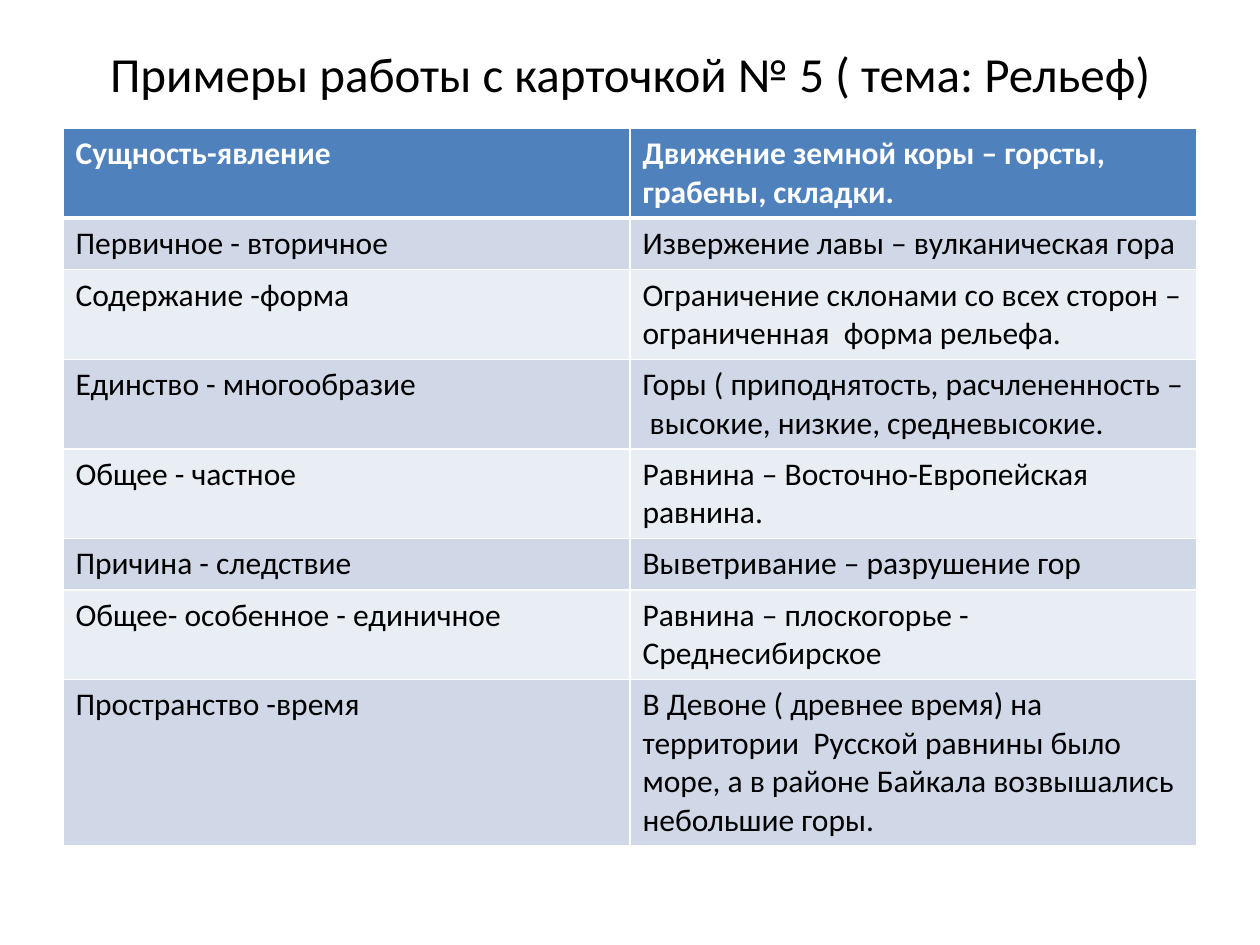
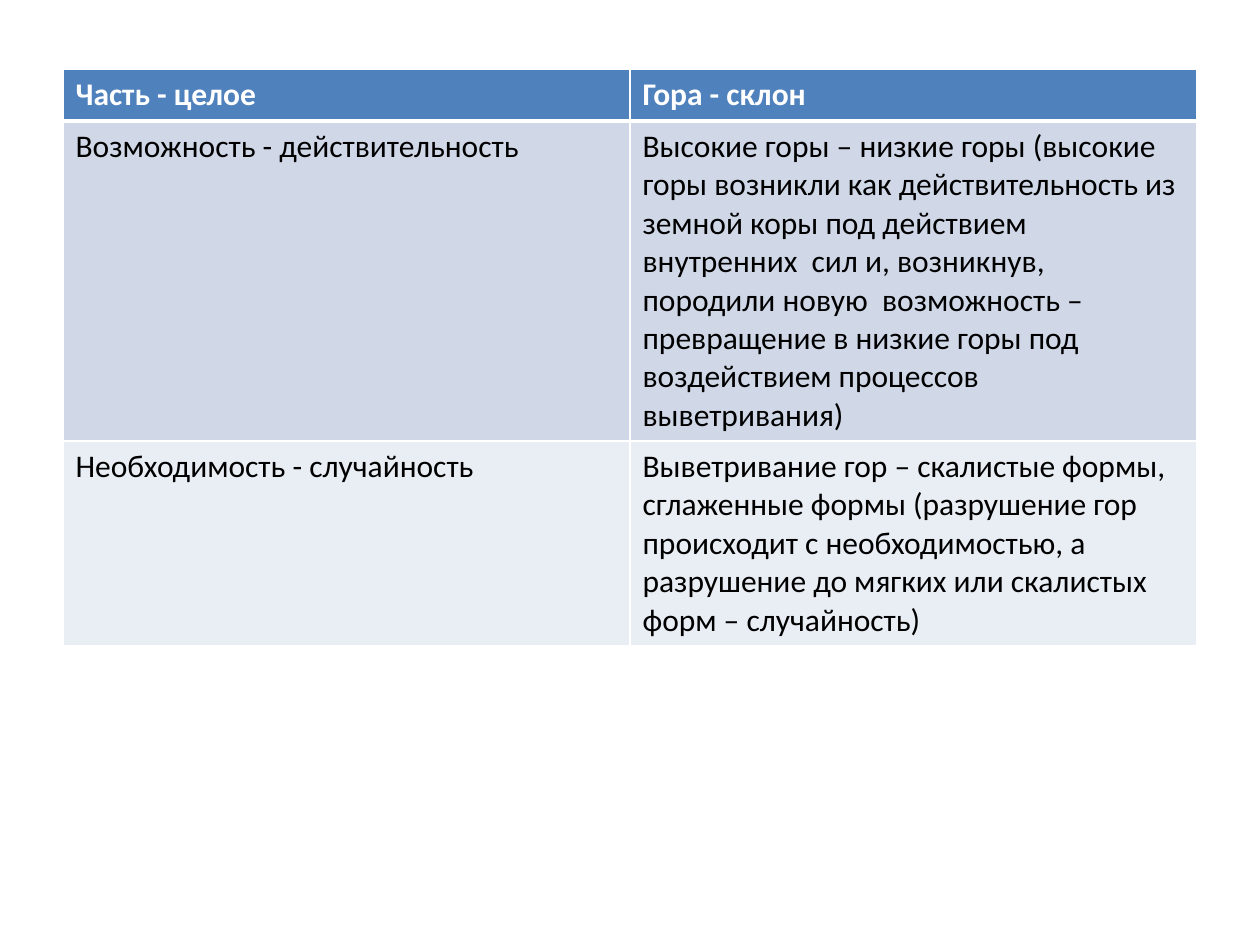
"""Build two slides of paired concepts on the topic of landforms."""
from lxml import etree
from pptx import Presentation
from pptx.dml.color import RGBColor
from pptx.enum.text import MSO_ANCHOR, PP_ALIGN
from pptx.oxml.ns import qn
from pptx.util import Inches, Pt

CENTER, LEFT = PP_ALIGN.CENTER, PP_ALIGN.LEFT
MIDDLE = MSO_ANCHOR.MIDDLE
TITLE_ONLY, BLANK = 5, 6

FONT = "Calibri"
COLORS = {
    "text": "000000",
    "white": "FFFFFF",
    "header": "4F81BD",
    "odd": "D0D8E8",
    "even": "E9EDF4",
}
MARGIN, WIDTH, ROW_H = 0.5, 9, 0.41

SLIDES = [
    {
        "title": "Примеры работы с карточкой № 5 ( тема: Рельеф)",
        "top": 1.02,
        "rows": [
            ("Сущность-явление", "Движение земной коры – горсты, грабены, складки."),
            ("Первичное - вторичное", "Извержение лавы – вулканическая гора"),
            ("Содержание -форма",
             "Ограничение склонами со всех сторон –ограниченная  форма рельефа."),
            ("Единство - многообразие",
             "Горы ( приподнятость, расчлененность –  высокие, низкие, средневысокие."),
            ("Общее - частное", "Равнина – Восточно-Европейская равнина."),
            ("Причина - следствие", "Выветривание – разрушение гор"),
            ("Общее- особенное - единичное", "Равнина – плоскогорье - Среднесибирское"),
            ("Пространство -время",
             "В Девоне ( древнее время) на территории  Русской равнины было море, "
             "а в районе Байкала возвышались небольшие горы."),
        ],
    },
    {
        "title": None,
        "top": 0.55,
        "rows": [
            ("Часть - целое", "Гора - склон"),
            ("Возможность - действительность",
             "Высокие горы – низкие горы (высокие горы возникли как действительность "
             "из земной коры под действием внутренних  сил и, возникнув, породили "
             "новую  возможность – превращение в низкие горы под  воздействием "
             "процессов выветривания)"),
            ("Необходимость - случайность",
             "Выветривание гор – скалистые формы, сглаженные формы (разрушение гор "
             "происходит с необходимостью, а разрушение до мягких или скалистых "
             "форм – случайность)"),
        ],
    },
]


def write(tf, text, size=18, color="text", bold=False, align=LEFT):
    p = tf.paragraphs[0]
    p.alignment = align
    r = p.add_run()
    r.text = text
    r.font.name = FONT
    r.font.size = Pt(size)
    r.font.bold = bold
    r.font.color.rgb = RGBColor.from_string(COLORS[color])


def add_borders(cell, top=1, bottom=1):
    tcPr = cell._tc.get_or_add_tcPr()
    for tag, width in (("lnL", 1), ("lnR", 1), ("lnT", top), ("lnB", bottom)):
        ln = etree.SubElement(tcPr, qn(f"a:{tag}"), w=str(Pt(width)))
        fill = etree.SubElement(ln, qn("a:solidFill"))
        etree.SubElement(fill, qn("a:srgbClr"), val=COLORS["white"])


def add_title(slide, text):
    sp = slide.shapes.title
    sp.left, sp.top = Inches(MARGIN), Inches(0.3)
    sp.width, sp.height = Inches(WIDTH), Inches(0.56)
    tf = sp.text_frame
    tf.vertical_anchor = MIDDLE
    write(tf, text, size=28, align=CENTER)


def add_pairs(slide, rows, top):
    table = slide.shapes.add_table(
        len(rows), 2, Inches(MARGIN), Inches(top),
        Inches(WIDTH), Inches(ROW_H * len(rows))).table
    for i, pair in enumerate(rows):
        header = i == 0
        band = "header" if header else "odd" if i % 2 else "even"
        for j, text in enumerate(pair):
            cell = table.cell(i, j)
            add_borders(cell, top=3 if i == 1 else 1, bottom=3 if header else 1)
            cell.fill.solid()
            cell.fill.fore_color.rgb = RGBColor.from_string(COLORS[band])
            write(cell.text_frame, text, color="white" if header else "text", bold=header)


def main():
    prs = Presentation()
    prs.slide_width, prs.slide_height = Inches(10), Inches(7.5)
    for content in SLIDES:
        layout = TITLE_ONLY if content["title"] else BLANK
        slide = prs.slides.add_slide(prs.slide_layouts[layout])
        if content["title"]:
            add_title(slide, content["title"])
        add_pairs(slide, content["rows"], content["top"])
    prs.save("out.pptx")


if __name__ == "__main__":
    main()
